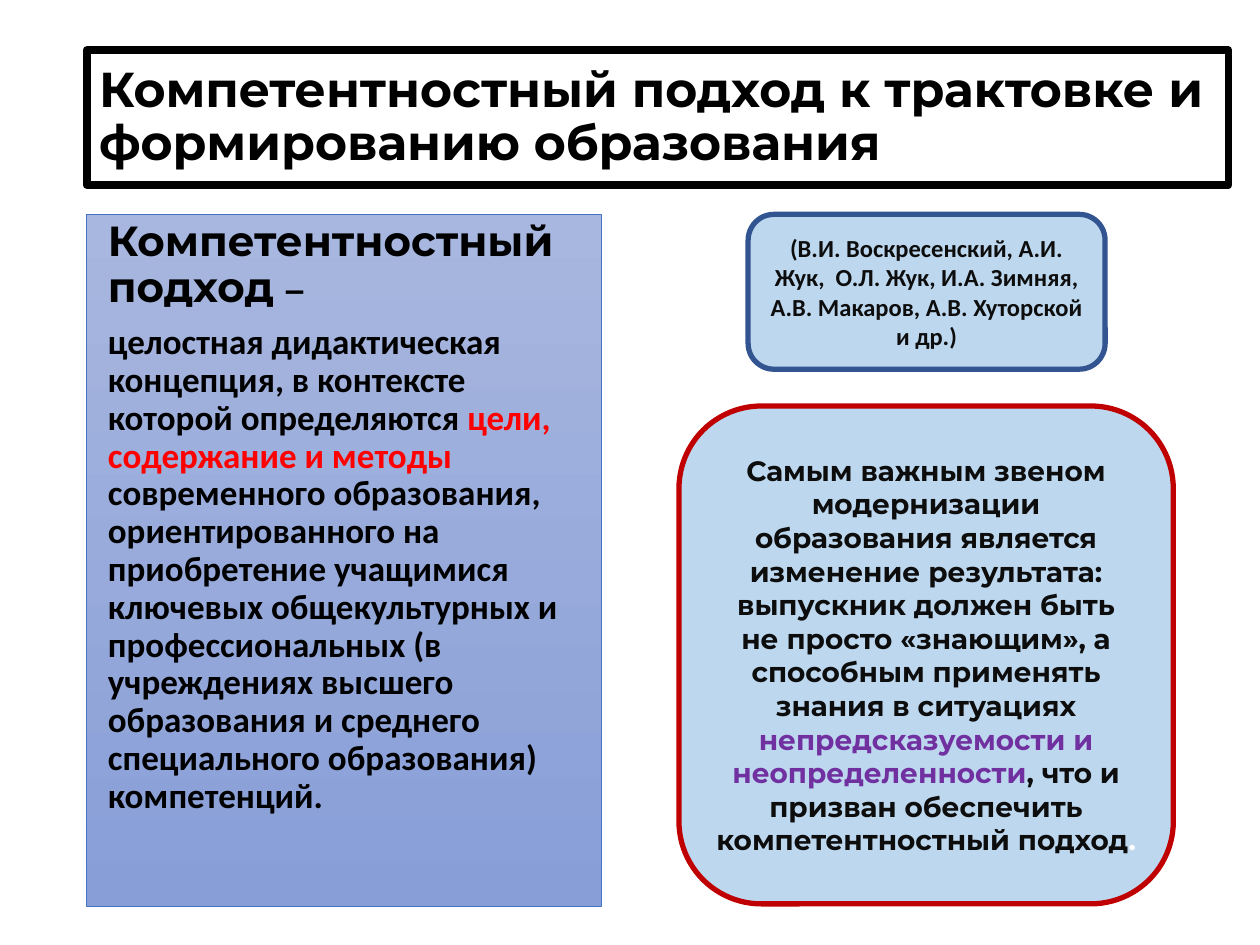
from dataclasses import dataclass

from lxml.etree import SubElement
from pptx import Presentation
from pptx.dml.color import RGBColor as Rgb
from pptx.enum.shapes import MSO_SHAPE as Kind
from pptx.enum.text import MSO_ANCHOR as Anchor, PP_ALIGN as Align
from pptx.oxml.ns import qn
from pptx.slide import Slide
from pptx.util import Pt

HEX = {
    "black": "000000", "ink": "0D0D0D", "white": "FFFFFF",
    "red": "FF0000", "violet": "7030A0", "sky": "BDD7EE",
    "navy": "325491", "crimson": "C00000", "blue": "4472C4",
    "light": "A8B7DF", "deep": "889ED7",
}
HEAD, BODY = "Montserrat", "Calibri"


@dataclass
class Run:
    text: str
    size: float
    font: str
    color: str = "ink"


@dataclass
class Box:
    left: float
    top: float
    width: float
    height: float
    line: str
    weight: float
    paras: list[list[Run]]
    fill: tuple[str, ...] = ()
    kind: Kind = Kind.RECTANGLE
    align: Align = Align.LEFT
    anchor: Anchor = Anchor.MIDDLE
    lead: float = 1.0
    before: float = 0
    indent: float = 7.2


def rgb(name: str) -> Rgb:
    return Rgb.from_string(HEX[name])


def paint(shape, names: tuple[str, ...]) -> None:
    """No colour leaves the shape clear, one is solid, two run downwards."""
    fill = shape.fill
    if not names:
        fill.background()
    elif len(names) == 1:
        fill.solid()
        fill.fore_color.rgb = rgb(names[0])
    else:
        fill.gradient()
        fill.gradient_angle = 270
        for stop, name in zip(fill.gradient_stops, names):
            stop.color.rgb = rgb(name)


def draw(slide: Slide, box: Box) -> None:
    shape = slide.shapes.add_shape(
        box.kind, Pt(box.left), Pt(box.top), Pt(box.width), Pt(box.height))
    shape.shadow.inherit = False
    paint(shape, box.fill)
    shape.line.color.rgb = rgb(box.line)
    shape.line.width = Pt(box.weight)
    SubElement(shape.element.spPr.find(qn("a:ln")), qn("a:round"))
    frame = shape.text_frame
    frame.word_wrap = True
    frame.vertical_anchor = box.anchor
    frame.margin_left = Pt(box.indent)
    for i, runs in enumerate(box.paras):
        para = frame.add_paragraph() if i else frame.paragraphs[0]
        para.alignment = box.align
        para.line_spacing = box.lead
        para.space_before = Pt(box.before)
        for item in runs:
            run = para.add_run()
            run.text = item.text
            font = run.font
            font.name, font.size, font.bold = item.font, Pt(item.size), True
            font.color.rgb = rgb(item.color)


LEFT, TOP = 49.5, 122.5

title = Box(LEFT, 28.8, 652.5, 77, "black", 4.5, [[
    Run("Компетентностный подход к трактовке и формированию образования",
        28, HEAD, "black")]], lead=0.9)

concept = Box(LEFT, TOP, 294, 395.5, "blue", 0.5, [
    [Run("Компетентностный подход ", 24, HEAD, "black"),
     Run("–", 20, HEAD, "black")],
    [Run("целостная дидактическая концепция, в контексте которой "
         "определяются ", 20, BODY, "black"),
     Run("цели, содержание и методы ", 20, BODY, "red"),
     Run("современного образования, ориентированного на приобретение "
         "учащимися ключевых общекультурных и профессиональных "
         "(в учреждениях высшего образования и среднего специального "
         "образования) компетенций.", 20, BODY, "black")],
], fill=("light", "deep"), anchor=Anchor.TOP, lead=0.9, before=7.5,
    indent=12.2)

authors = Box(427.5, TOP, 204, 88.5, "navy", 3, [[
    Run("(В.И. Воскресенский, А.И. Жук,  О.Л. Жук, И.А. Зимняя, "
        "А.В. Макаров, А.В. Хуторской и др.)", 14, BODY)]],
    fill=("sky",), kind=Kind.ROUNDED_RECTANGLE, align=Align.CENTER)

result = Box(388, 232, 282.5, 284.5, "crimson", 3, [[
    Run("Самым важным звеном модернизации образования является изменение "
        "результата: выпускник должен быть не просто «знающим», а "
        "способным применять знания в ситуациях ", 16, HEAD),
    Run("непредсказуемости и неопределенности", 16, HEAD, "violet"),
    Run(", что и призван обеспечить компетентностный подход", 16, HEAD),
    Run(".", 16, HEAD, "white")]],
    fill=("sky",), kind=Kind.ROUNDED_RECTANGLE, align=Align.CENTER)


def main() -> None:
    deck = Presentation()
    deck.slide_width, deck.slide_height = Pt(720), Pt(540)
    slide = deck.slides.add_slide(deck.slide_layouts[6])
    for box in (title, concept, authors, result):
        draw(slide, box)
    deck.save("out.pptx")


if __name__ == "__main__":
    main()
